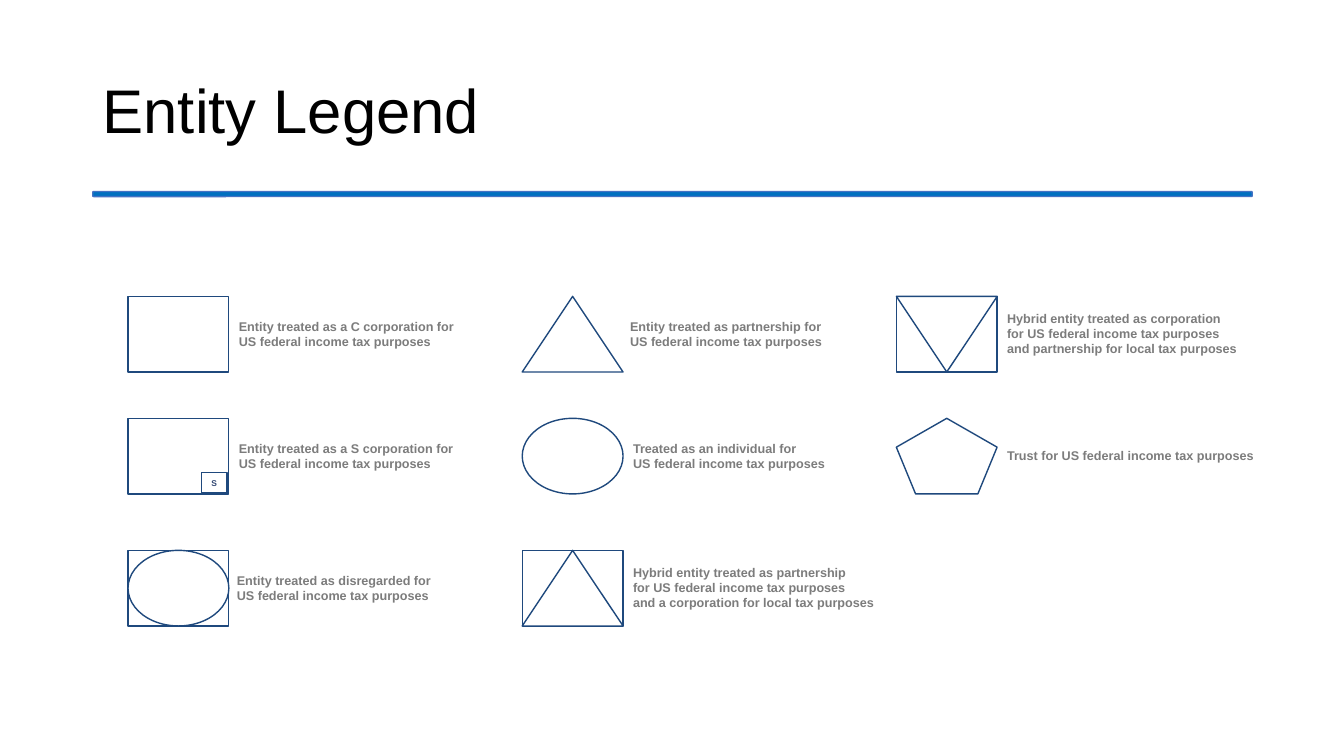
"""Build the entity legend slide."""
from pptx import Presentation
from pptx.dml.color import RGBColor
from pptx.enum.shapes import MSO_SHAPE as Kind
from pptx.enum.text import MSO_ANCHOR as Anchor, MSO_AUTO_SIZE as Fit, PP_ALIGN as Align
from pptx.util import Inches, Pt

BLACK = RGBColor(0x00, 0x00, 0x00)
WHITE = RGBColor(0xFF, 0xFF, 0xFF)
GREY = RGBColor(0x7C, 0x7C, 0x7C)
NAVY = RGBColor(0x1F, 0x49, 0x7D)
SLATE = RGBColor(0x32, 0x48, 0x73)
BLUE = RGBColor(0x00, 0x70, 0xC0)
EDGE = RGBColor(0x44, 0x72, 0xC4)

COLS = (1.27, 5.18, 8.89)
ROWS = (2.94, 4.15, 5.46)
WIDE, HIGH = 1, 0.75
LEAD, PAD = 0.155, 0.1
TAX = "US federal income tax purposes"

BOX, OVAL, PEAK = (Kind.RECTANGLE, 0), (Kind.OVAL, 0), (Kind.ISOSCELES_TRIANGLE, 0)
DIP, FIVE = (Kind.ISOSCELES_TRIANGLE, 180), (Kind.REGULAR_PENTAGON, 0)

ITEMS = (
    (0, 0, (BOX,), 0, 2.39, ("Entity treated as a C corporation for", TAX)),
    (0, 1, (BOX,), 0, 2.38, ("Entity treated as a S corporation for", TAX)),
    (0, 2, (BOX, OVAL), -0.02, 2.18, ("Entity treated as disregarded for", TAX)),
    (1, 0, (PEAK,), -0.03, 2.15, ("Entity treated as partnership for", TAX)),
    (1, 1, (OVAL,), 0, 2.12, ("Treated as an individual for", TAX)),
    (1, 2, (BOX, PEAK), 0, 2.61, ("Hybrid entity treated as partnership", "for " + TAX,
                                  "and a corporation for local tax purposes")),
    (2, 0, (BOX, DIP), 0, 2.5, ("Hybrid entity treated as corporation", "for " + TAX,
                                "and partnership for local tax purposes")),
    (2, 1, (FIVE,), 0, 2.68, ("Trust for " + TAX,)),
)


def write(frame, lines, size, color, bold=False, align=Align.LEFT):
    """Write each line as a paragraph with one run."""
    for num, line in enumerate(lines):
        para = frame.add_paragraph() if num else frame.paragraphs[0]
        para.alignment = align
        run = para.add_run()
        run.text = line
        font = run.font
        font.name, font.size, font.bold = "Arial", Pt(size), bold
        font.color.rgb = color


def draw(shapes, kind, spot, fill=None, line=NAVY):
    """Add one outlined shape, hollow unless a fill is given."""
    shape = shapes.add_shape(kind, *map(Inches, spot))
    shape.shadow.inherit = False
    if fill is None:
        shape.fill.background()
    else:
        shape.fill.solid()
        shape.fill.fore_color.rgb = fill
    shape.line.color.rgb = line
    shape.line.width = Pt(1)
    return shape


def head(shapes):
    """Add the title and the rule below it."""
    draw(shapes, Kind.ROUNDED_RECTANGLE, (0.92, 1.9, 11.5, 0.05), BLUE, EDGE)
    frame = shapes.add_textbox(*map(Inches, (0.92, 0.4, 11.5, 1.45))).text_frame
    frame.word_wrap = True
    frame.vertical_anchor = Anchor.MIDDLE
    write(frame, ["Entity Legend"], 44, BLACK)
    frame.paragraphs[0].line_spacing = 0.9


def icon(shapes, left, top, parts):
    """Stack the parts of an entity symbol, grouped when there are several."""
    home = shapes.add_group_shape().shapes if len(parts) > 1 else shapes
    for kind, turn in parts:
        fill = None if kind == Kind.RECTANGLE else WHITE
        draw(home, kind, (left, top, WIDE, HIGH), fill).rotation = turn


def label(shapes, left, mid, width, lines):
    """Add a label centred on the height of its symbol."""
    high = len(lines) * LEAD + PAD
    box = shapes.add_textbox(*map(Inches, (left, mid - high / 2, width, high)))
    frame = box.text_frame
    frame.word_wrap = False
    frame.auto_size = Fit.SHAPE_TO_FIT_TEXT
    write(frame, lines, 9, GREY, True)


def badge(shapes, left, top):
    """Mark a symbol with a small S in its lower right corner."""
    frame = draw(shapes, Kind.RECTANGLE, (left, top, 0.25, 0.2)).text_frame
    frame.margin_left = frame.margin_right = 0
    frame.margin_top = frame.margin_bottom = 0
    frame.vertical_anchor = Anchor.MIDDLE
    write(frame, ["S"], 6, SLATE, True, Align.CENTER)


def main():
    """Build and save the slide."""
    deck = Presentation()
    deck.slide_width, deck.slide_height = Inches(13.33), Inches(7.5)
    shapes = deck.slides.add_slide(deck.slide_layouts[6]).shapes
    head(shapes)
    for col, row, parts, nudge, width, lines in ITEMS:
        left, top = COLS[col], ROWS[row]
        icon(shapes, left, top, parts)
        label(shapes, left + WIDE + nudge, top + HIGH / 2, width, lines)
    badge(shapes, COLS[0] + 0.73, ROWS[1] + 0.54)
    deck.save("out.pptx")


if __name__ == "__main__":
    main()
